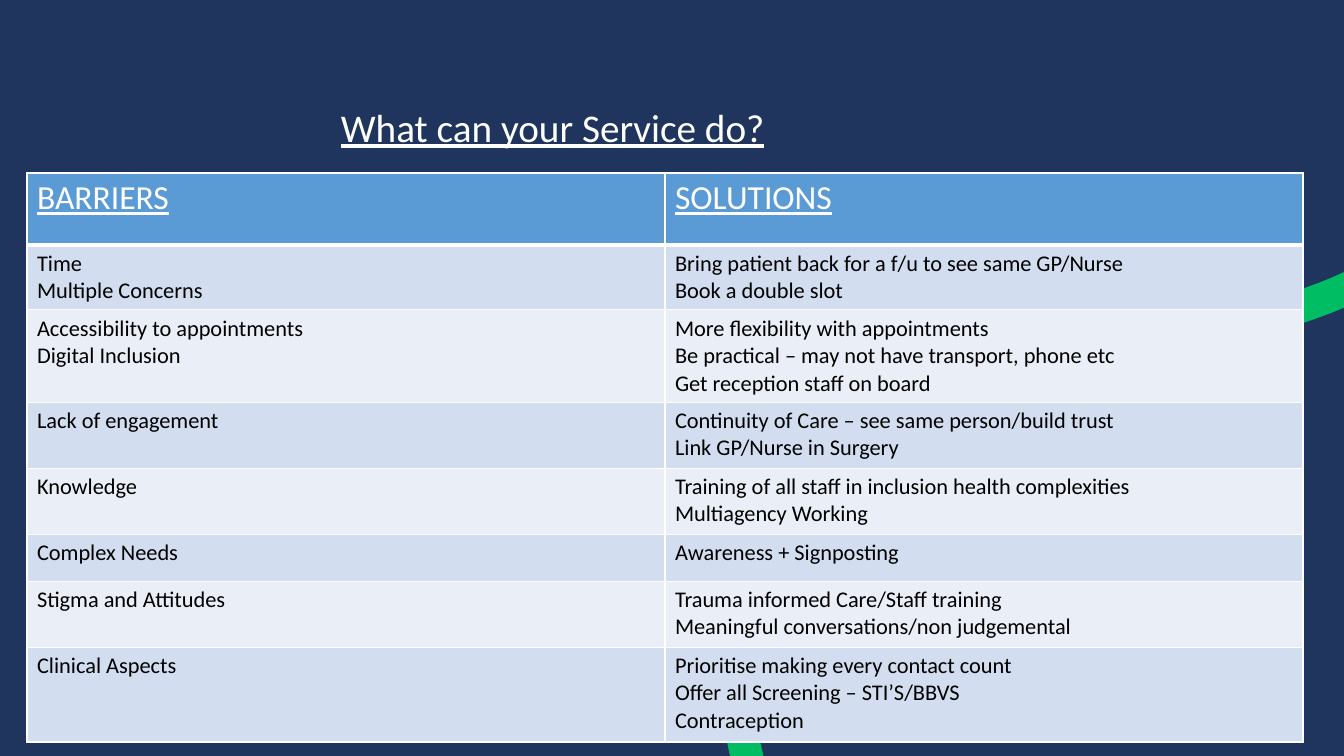
"""Build the slide that pairs service barriers with their solutions."""
from pptx import Presentation, util as u
from pptx.dml.color import RGBColor
from pptx.enum import shapes, text
from pptx.oxml import parse_xml
from pptx.oxml.ns import nsdecls

COLOURS = {"navy": "1F355E", "green": "00BC62", "white": "FFFFFF", "black": "000000",
           "header": "5B9BD5", "dark_band": "D2DEEF", "light_band": "EAEFF7"}
FONT = "Calibri"
SLIDE = (1344, 756)
TITLE = "What can your Service do?"
TITLE_BOX = (331, 98, 882, 57)
TABLE_ORIGIN = (27, 173)
COLUMN_WIDTH = 638
ROWS = [
    (72, ["BARRIERS"], ["SOLUTIONS"]),
    (64, ["Time", "Multiple Concerns"],
     ["Bring patient back for a f/u to see same GP/Nurse", "Book a double slot"]),
    (91, ["Accessibility to appointments", "Digital Inclusion"],
     ["More flexibility with appointments",
      "Be practical – may not have transport, phone etc",
      "Get reception staff on board"]),
    (66, ["Lack of engagement"],
     ["Continuity of Care – see same person/build trust", "Link GP/Nurse in Surgery"]),
    (66, ["Knowledge"],
     ["Training of all staff in inclusion health complexities", "Multiagency Working"]),
    (47, ["Complex Needs"], ["Awareness + Signposting"]),
    (66, ["Stigma and Attitudes"],
     ["Trauma informed Care/Staff training", "Meaningful conversations/non judgemental"]),
    (95, ["Clinical Aspects"],
     ["Prioritise making every contact count", "Offer all Screening – STI’S/BBVS",
      "Contraception"]),
]
RIBBON = [
    [(1409, 253), (1244, 376), (900, 330), (771, 510)],
    [(771, 510), (645, 686), (864, 979), (870, 1245)],
]
RIBBON_LIMIT = (1370, 780)
STEPS = 40


def px(length):
    return u.Emu(round(length * 914400 / 100.8))


def colour(name):
    return RGBColor.from_string(COLOURS[name])


def write(frame, lines, size, ink, underline=False):
    for index, line in enumerate(lines):
        para = frame.paragraphs[0] if index == 0 else frame.add_paragraph()
        span = para.add_run()
        span.text = line
        font = span.font
        font.name, font.size = FONT, u.Pt(size)
        font.bold, font.underline = False, underline
        font.color.rgb = colour(ink)


def add_borders(cell, bottom):
    for side, width in (("L", 1), ("R", 1), ("T", 1), ("B", bottom)):
        cell._tc.get_or_add_tcPr().append(parse_xml(
            f'<a:ln{side} {nsdecls("a")} w="{u.Pt(width)}"><a:solidFill>'
            f'<a:srgbClr val="{COLOURS["white"]}"/></a:solidFill></a:ln{side}>'))


def curve_points(curve):
    for step in range(STEPS + 1):
        t = step / STEPS
        weights = ((1 - t) ** 3, 3 * t * (1 - t) ** 2, 3 * t * t * (1 - t), t ** 3)
        yield tuple(sum(w * point[axis] for w, point in zip(weights, curve))
                    for axis in (0, 1))


def add_backdrop(page):
    panel = page.shapes.add_shape(shapes.MSO_SHAPE.RECTANGLE, 0, 0, *map(px, SLIDE))
    panel.shadow.inherit = False
    panel.fill.solid()
    panel.fill.fore_color.rgb = colour("navy")
    panel.line.fill.background()

    points = [(px(x), px(y)) for curve in RIBBON for x, y in curve_points(curve)
              if x <= RIBBON_LIMIT[0] and y <= RIBBON_LIMIT[1]]
    builder = page.shapes.build_freeform(*points[0])
    builder.add_line_segments(points[1:], close=False)
    ribbon = builder.convert_to_shape()
    ribbon.shadow.inherit = False
    ribbon.fill.background()
    ribbon.line.color.rgb = colour("green")
    ribbon.line.width = u.Pt(23.25)


def add_barrier_table(page):
    height = sum(row[0] for row in ROWS)
    table = page.shapes.add_table(len(ROWS), 2, *map(px, TABLE_ORIGIN),
                                  px(2 * COLUMN_WIDTH), px(height)).table
    for column in table.columns:
        column.width = px(COLUMN_WIDTH)
    for index, (row_height, *entries) in enumerate(ROWS):
        table.rows[index].height = px(row_height)
        is_header = index == 0
        band = "header" if is_header else ("light_band", "dark_band")[index % 2]
        for column, lines in enumerate(entries):
            cell = table.cell(index, column)
            add_borders(cell, 3 if is_header else 1)
            cell.fill.solid()
            cell.fill.fore_color.rgb = colour(band)
            write(cell.text_frame, lines, 24 if is_header else 16,
                  "white" if is_header else "black", underline=is_header)


def add_title(page):
    frame = page.shapes.add_textbox(*map(px, TITLE_BOX)).text_frame
    frame.word_wrap = True
    frame.auto_size = text.MSO_AUTO_SIZE.SHAPE_TO_FIT_TEXT
    write(frame, [TITLE], 28, "white", underline=True)


def main():
    deck = Presentation()
    deck.slide_width, deck.slide_height = map(px, SLIDE)
    page = deck.slides.add_slide(deck.slide_layouts[6])
    add_backdrop(page)
    add_barrier_table(page)
    add_title(page)
    deck.save("out.pptx")


if __name__ == "__main__":
    main()
